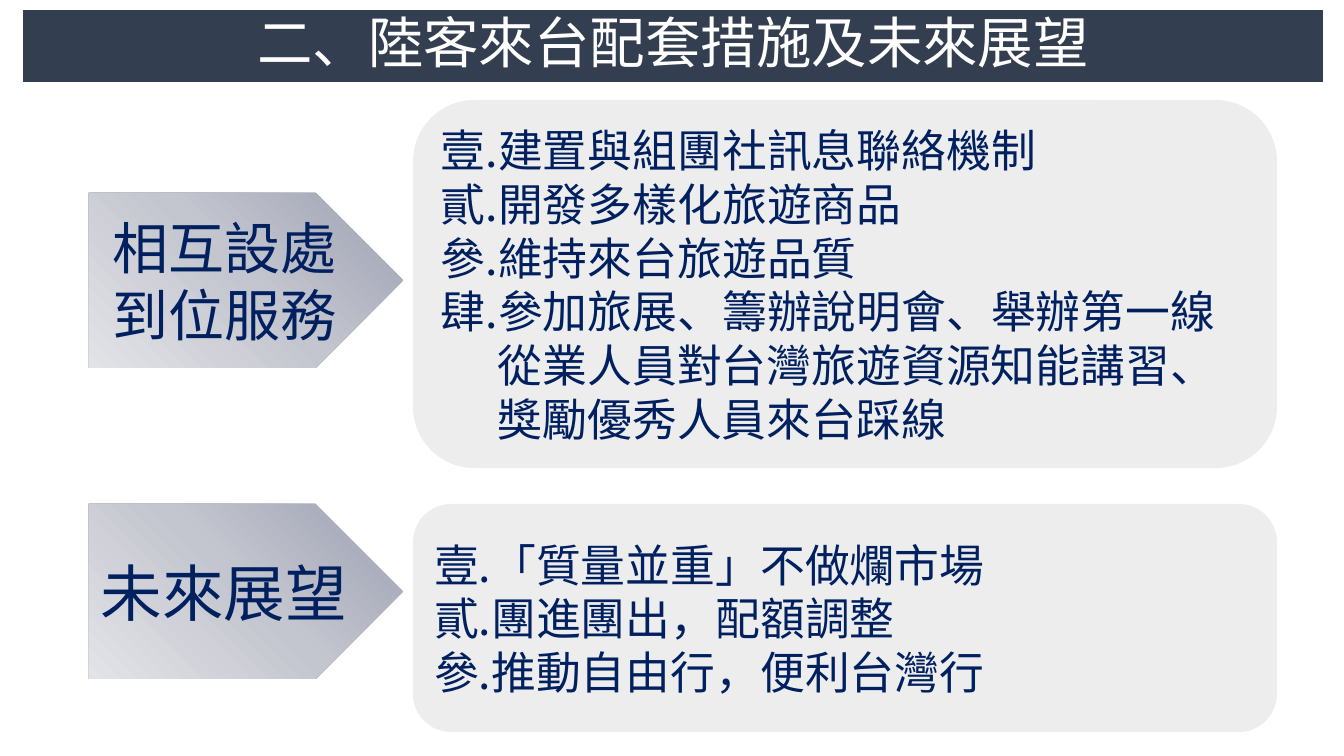
from copy import deepcopy
from dataclasses import dataclass

from lxml.etree import SubElement
from pptx import Presentation
from pptx.dml.color import RGBColor
from pptx.enum.shapes import MSO_SHAPE
from pptx.enum.text import MSO_ANCHOR, MSO_AUTO_SIZE, PP_ALIGN
from pptx.oxml.ns import qn
from pptx.shapes.autoshape import Shape
from pptx.slide import Slide
from pptx.util import Emu, Pt

EMU_PER_INCH = 914400
PX_PER_INCH = 100.8
FONT = "Noto Sans CJK SC"
COLORS = {
    "banner": "333F50",
    "white": "FFFFFF",
    "navy": "002060",
    "card": "EDEDED",
}
ARROW_GRADIENT = {0.0: "9DA1B3", 0.5: "C4C6CF", 1.0: "E2E3E7"}
ARROW_LEFT, ARROW_WIDTH, ARROW_HEIGHT = 89, 314, 175
CARD_LEFT, CARD_WIDTH = 413, 864
NUMBER_INDENT = 57


@dataclass(frozen=True)
class Section:
    heading: list[str]
    heading_size: int
    arrow_top: int
    card_top: int
    card_height: int
    items: list[str]


SECTIONS = [
    Section(["相互設處", "到位服務"], 40, 193, 100, 368, [
        "建置與組團社訊息聯絡機制",
        "開發多樣化旅遊商品",
        "維持來台旅遊品質",
        "參加旅展、籌辦說明會、舉辦第一線從業人員對台灣旅遊資源知能講習、獎勵優秀人員來台踩線",
    ]),
    Section(["未來展望"], 44, 504, 504, 228, [
        "「質量並重」不做爛市場",
        "團進團出，配額調整",
        "推動自由行，便利台灣行",
    ]),
]


def px(length: int) -> Emu:
    return Emu(round(length * EMU_PER_INCH / PX_PER_INCH))


def rgb(name: str) -> RGBColor:
    return RGBColor.from_string(COLORS[name])


def write_text(shape: Shape, lines: list[str], *, size: float, color: str,
               align: PP_ALIGN = PP_ALIGN.CENTER, spacing: float = 1.0,
               numbered: bool = False) -> None:
    frame = shape.text_frame
    frame.word_wrap = True
    frame.auto_size = MSO_AUTO_SIZE.NONE
    frame.vertical_anchor = MSO_ANCHOR.MIDDLE
    for index, line in enumerate(lines):
        paragraph = frame.add_paragraph() if index else frame.paragraphs[0]
        paragraph.alignment = align
        paragraph.line_spacing = spacing
        if numbered:
            properties = paragraph._p.get_or_add_pPr()
            properties.set("marL", str(px(NUMBER_INDENT)))
            properties.set("indent", str(-px(NUMBER_INDENT)))
            SubElement(properties, qn("a:buAutoNum"), type="ea1ChtPeriod")
        run = paragraph.add_run()
        run.text = line
        run.font.size = Pt(size)
        run.font.name = FONT
        run.font.color.rgb = rgb(color)
        SubElement(run._r.get_or_add_rPr(), qn("a:ea"), typeface=FONT)


def add_plain_shape(slide: Slide, kind: MSO_SHAPE, left: int, top: int,
                    width: int, height: int) -> Shape:
    shape = slide.shapes.add_shape(kind, px(left), px(top), px(width), px(height))
    shape.shadow.inherit = False
    shape.line.fill.background()
    return shape


def add_arrow(slide: Slide, section: Section) -> None:
    arrow = add_plain_shape(slide, MSO_SHAPE.PENTAGON, ARROW_LEFT,
                            section.arrow_top, ARROW_WIDTH, ARROW_HEIGHT)
    arrow.fill.gradient()
    arrow.fill.gradient_angle = 225
    stop_list = arrow._element.spPr.find(f".//{qn('a:gsLst')}")
    stop_list.insert(1, deepcopy(stop_list[0]))
    for stop, (position, color) in zip(arrow.fill.gradient_stops, ARROW_GRADIENT.items()):
        stop.position = position
        stop.color.rgb = RGBColor.from_string(color)
    write_text(arrow, section.heading, size=section.heading_size, color="navy")


def add_card(slide: Slide, section: Section) -> None:
    card = add_plain_shape(slide, MSO_SHAPE.ROUNDED_RECTANGLE, CARD_LEFT,
                           section.card_top, CARD_WIDTH, section.card_height)
    card.fill.solid()
    card.fill.fore_color.rgb = rgb("card")
    write_text(card, section.items, size=32, color="navy",
               align=PP_ALIGN.LEFT, numbered=True)


def add_title(slide: Slide, text: str) -> None:
    title = slide.shapes.title
    title.left, title.top, title.width, title.height = map(px, (23, 10, 1300, 72))
    title.fill.solid()
    title.fill.fore_color.rgb = rgb("banner")
    write_text(title, [text], size=39.6, color="white", spacing=0.9)


def main() -> None:
    presentation = Presentation()
    presentation.slide_width = px(1344)
    presentation.slide_height = px(756)
    slide = presentation.slides.add_slide(presentation.slide_layouts[5])
    add_title(slide, "二、陸客來台配套措施及未來展望")
    for section in SECTIONS:
        add_arrow(slide, section)
        add_card(slide, section)
    presentation.save("out.pptx")


if __name__ == "__main__":
    main()
